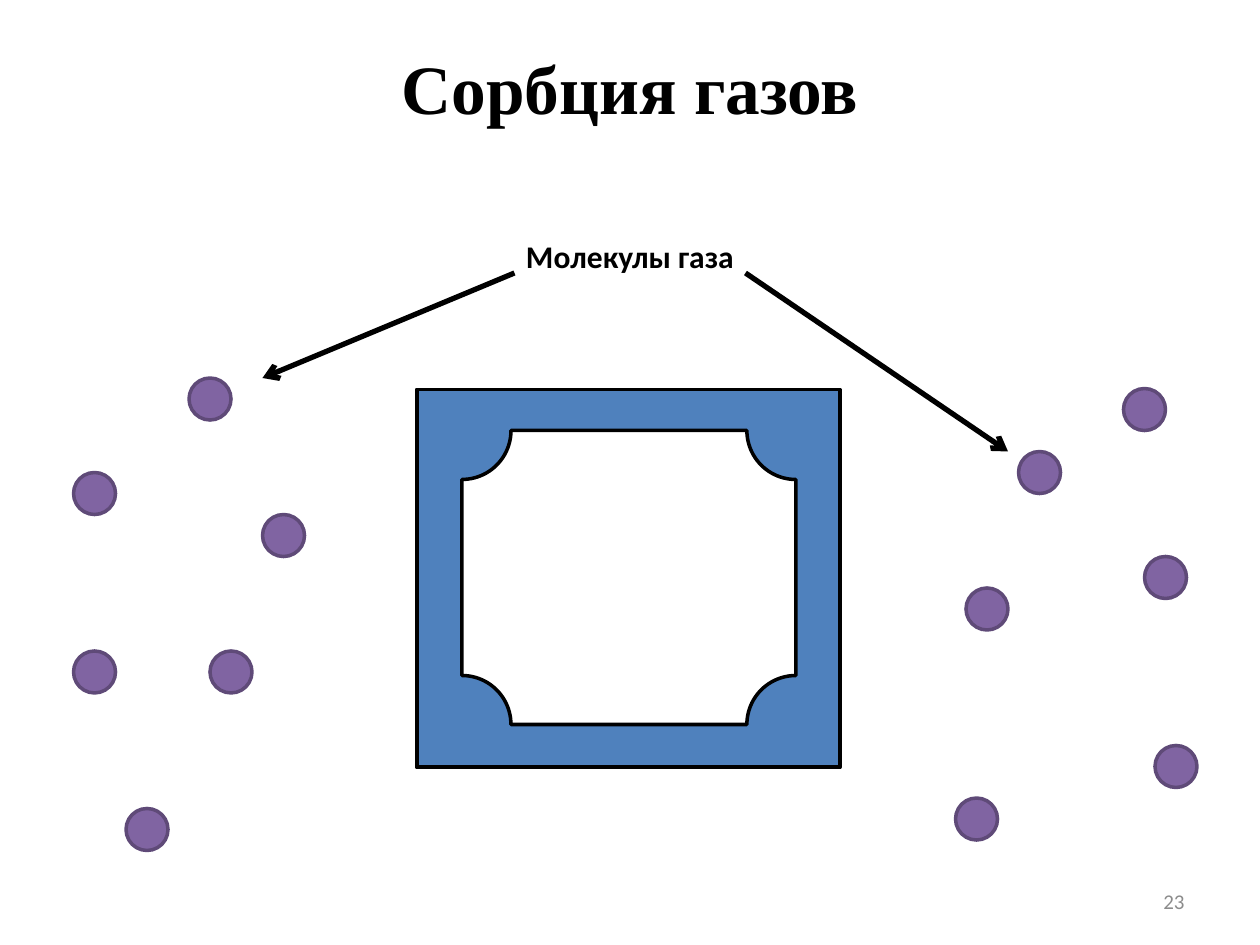
"""Builds the slide on gas sorption: a sorbent block with a cavity among gas molecules."""
from dataclasses import dataclass
from typing import NamedTuple

from lxml.etree import SubElement
from pptx import Presentation
from pptx.dml.color import RGBColor
from pptx.enum.shapes import MSO_CONNECTOR as Connector, MSO_SHAPE as Preset
from pptx.enum.text import MSO_ANCHOR as Anchor, PP_ALIGN as Align
from pptx.oxml.ns import qn
from pptx.slide import Slide
from pptx.text.text import TextFrame
from pptx.util import Emu, Pt

PX = 7620


class Box(NamedTuple):
    left: int
    top: int
    width: int
    height: int


class Point(NamedTuple):
    x: int
    y: int


class Arrow(NamedTuple):
    start: Point
    end: Point


@dataclass(frozen=True)
class TextStyle:
    font: str
    size: float
    color: str
    bold: bool
    align: Align
    anchor: Anchor


@dataclass(frozen=True)
class ShapeStyle:
    preset: Preset
    fill: str
    line: str
    weight: float


@dataclass(frozen=True)
class Theme:
    title: TextStyle = TextStyle("Times New Roman", 39.6, "000000", True, Align.CENTER, Anchor.MIDDLE)
    label: TextStyle = TextStyle("Calibri", 18, "000000", True, Align.CENTER, Anchor.TOP)
    number: TextStyle = TextStyle("Calibri", 12, "8C8C8C", False, Align.RIGHT, Anchor.MIDDLE)
    sorbent: ShapeStyle = ShapeStyle(Preset.RECTANGLE, "4F81BD", "000000", 2.25)
    cavity: ShapeStyle = ShapeStyle(Preset.PLAQUE, "FFFFFF", "000000", 2)
    molecule: ShapeStyle = ShapeStyle(Preset.OVAL, "8064A2", "5F4A78", 2)
    arrow_color: str = "000000"
    arrow_weight: float = 3


THEME = Theme()
PAGE = Point(1200, 900)
TITLE = Box(0, 36, 1200, 94)
LABEL = Box(0, 220, 1200, 48)
NUMBER = Box(860, 834, 280, 48)
SORBENT = Box(397, 371, 403, 360)
CAVITY = Box(440, 410, 318, 280)
MOLECULE_SIZE = 40
MOLECULES = [
    Point(200, 620), Point(1070, 370), Point(970, 430), Point(920, 560),
    Point(120, 770), Point(70, 450), Point(180, 360), Point(1090, 530),
    Point(910, 760), Point(250, 490), Point(1100, 710), Point(70, 620),
]
ARROWS = [
    Arrow(Point(490, 260), Point(250, 360)),
    Arrow(Point(710, 260), Point(960, 430)),
]


def px(length: int) -> Emu:
    """Turn a length in px into EMU."""
    return Emu(length * PX)


def write(frame: TextFrame, text: str, style: TextStyle) -> None:
    """Write one styled paragraph into a text frame."""
    frame.word_wrap = True
    frame.vertical_anchor = style.anchor
    para = frame.paragraphs[0]
    para.alignment = style.align
    span = para.add_run()
    span.text = text
    span.font.name = style.font
    span.font.size = Pt(style.size)
    span.font.bold = style.bold
    span.font.color.rgb = RGBColor.from_string(style.color)


def add_title(page: Slide, box: Box, text: str) -> None:
    """Place and fill the title placeholder."""
    title = page.shapes.title
    title.left, title.top, title.width, title.height = map(px, box)
    write(title.text_frame, text, THEME.title)


def add_text(page: Slide, box: Box, text: str, style: TextStyle) -> None:
    """Add a text box."""
    write(page.shapes.add_textbox(*map(px, box)).text_frame, text, style)


def add_figure(page: Slide, box: Box, style: ShapeStyle) -> None:
    """Add a filled and outlined preset shape."""
    figure = page.shapes.add_shape(style.preset, *map(px, box))
    figure.shadow.inherit = False
    figure.fill.solid()
    figure.fill.fore_color.rgb = RGBColor.from_string(style.fill)
    figure.line.color.rgb = RGBColor.from_string(style.line)
    figure.line.width = Pt(style.weight)


def add_arrow(page: Slide, arrow: Arrow) -> None:
    """Add a straight line with an open arrowhead at its end."""
    line = page.shapes.add_connector(Connector.STRAIGHT, *map(px, arrow.start + arrow.end))
    line.line.color.rgb = RGBColor.from_string(THEME.arrow_color)
    line.line.width = Pt(THEME.arrow_weight)
    properties = line.line._get_or_add_ln()
    SubElement(properties, qn("a:tailEnd"), type="arrow")
    SubElement(properties.getparent(), qn("a:effectLst"))


def main() -> None:
    """Build and save the deck."""
    deck = Presentation()
    deck.slide_width, deck.slide_height = map(px, PAGE)
    page = deck.slides.add_slide(deck.slide_layouts[5])
    add_figure(page, SORBENT, THEME.sorbent)
    add_figure(page, CAVITY, THEME.cavity)
    for spot in MOLECULES:
        add_figure(page, Box(*spot, MOLECULE_SIZE, MOLECULE_SIZE), THEME.molecule)
    add_title(page, TITLE, "Сорбция газов")
    add_text(page, LABEL, "Молекулы газа", THEME.label)
    for arrow in ARROWS:
        add_arrow(page, arrow)
    add_text(page, NUMBER, "23", THEME.number)
    deck.save("out.pptx")


if __name__ == "__main__":
    main()
